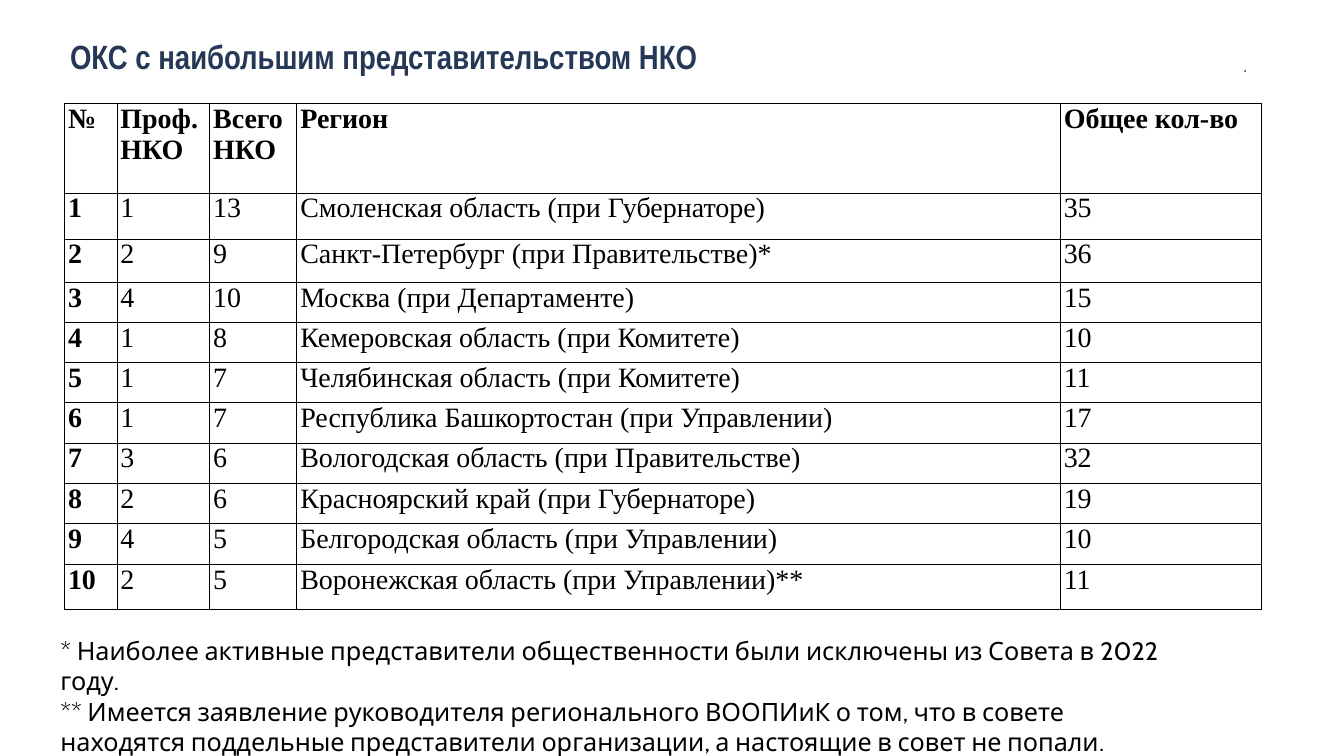
from lxml.etree import SubElement
from pptx import Presentation
from pptx.dml.color import RGBColor
from pptx.enum.text import MSO_ANCHOR as Anchor, MSO_AUTO_SIZE as AutoSize, PP_ALIGN as Align
from pptx.oxml.ns import qn
from pptx.util import Inches, Pt

NAVY = RGBColor(0x25, 0x39, 0x57)
BLACK = RGBColor(0, 0, 0)

TITLE_FONT = {"name": "Arial Narrow", "size": Pt(48), "bold": True}
DOT_FONT = {"name": "Arial Narrow", "size": Pt(24)}
NOTE_FONT = {"name": "Cabin", "size": Pt(36)}
CELL_FONT = {"name": "Times New Roman", "size": Pt(40)}

COLUMN_WIDTHS = [1.04, 1.84, 1.73, 15.15, 3.99]
ROW_HEIGHTS = [1.78, 0.91, 0.87, 0.79, 0.79, 0.79, 0.81, 0.81, 0.79, 0.81, 0.9]
HEADER = ["№", "Проф. НКО", "Всего НКО", "Регион", "Общее кол-во"]
COUNCILS = [
    (1, 13, "Смоленская область (при Губернаторе)", 35),
    (2, 9, "Санкт-Петербург (при Правительстве)*", 36),
    (4, 10, "Москва (при Департаменте)", 15),
    (1, 8, "Кемеровская область (при Комитете)", 10),
    (1, 7, "Челябинская область (при Комитете)", 11),
    (1, 7, "Республика Башкортостан (при Управлении)", 17),
    (3, 6, "Вологодская область (при Правительстве)", 32),
    (2, 6, "Красноярский край (при Губернаторе)", 19),
    (4, 5, "Белгородская область (при Управлении)", 10),
    (2, 5, "Воронежская область (при Управлении)**", 11),
]
NOTES = [
    "* Наиболее активные представители общественности были исключены из Совета в 2022 году.",
    "** Имеется заявление руководителя регионального ВООПИиК о том, что в совете "
    "находятся поддельные представители организации, а настоящие в совет не попали.",
]


def set_attrs(obj, values):
    for name, value in values.items():
        setattr(obj, name, value)


def write(p, text, font, color, **paragraph_format):
    set_attrs(p, paragraph_format)
    r = p.add_run()
    r.text = text
    set_attrs(r.font, font)
    r.font.color.rgb = color


def add_text(slide, box, lines, font, color, frame, **paragraph_format):
    tf = slide.shapes.add_textbox(*map(Inches, box)).text_frame
    set_attrs(tf, {"word_wrap": True, **frame})
    for i, line in enumerate(lines):
        p = tf.add_paragraph() if i else tf.paragraphs[0]
        write(p, line, font, color, **paragraph_format)


def margins(horizontal, vertical):
    return {
        "margin_left": Inches(horizontal), "margin_right": Inches(horizontal),
        "margin_top": Inches(vertical), "margin_bottom": Inches(vertical),
    }


def add_borders(cell):
    tc_pr = cell._tc.get_or_add_tcPr()
    for side in ("lnL", "lnR", "lnT", "lnB"):
        ln = SubElement(tc_pr, qn(f"a:{side}"), w=str(Pt(1)))
        fill = SubElement(ln, qn("a:solidFill"))
        SubElement(fill, qn("a:srgbClr"), val=str(BLACK))


def add_council_table(slide):
    rows = [HEADER] + [(i, *council) for i, council in enumerate(COUNCILS, 1)]
    box = (1.28, 2.05, sum(COLUMN_WIDTHS), sum(ROW_HEIGHTS))
    table = slide.shapes.add_table(len(rows), len(HEADER), *map(Inches, box)).table
    set_attrs(table, {"first_row": False, "horz_banding": False})
    for column, width in zip(table.columns, COLUMN_WIDTHS):
        column.width = Inches(width)
    for i, (row, height, values) in enumerate(zip(table.rows, ROW_HEIGHTS, rows)):
        row.height = Inches(height)
        for j, (cell, value) in enumerate(zip(row.cells, values)):
            set_attrs(cell, margins(0.07, 0))
            add_borders(cell)
            cell.fill.background()
            font = {**CELL_FONT, "bold": i == 0 or j == 0}
            write(cell.text_frame.paragraphs[0], str(value), font, BLACK, alignment=Align.JUSTIFY)


def main():
    """Build the slide on public councils with the most NGO members."""
    prs = Presentation()
    set_attrs(prs, {"slide_width": Inches(26.67), "slide_height": Inches(15)})
    slide = prs.slides.add_slide(prs.slide_layouts[6])
    inset, grow = margins(0.08, 0.08), {"auto_size": AutoSize.SHAPE_TO_FIT_TEXT}
    add_text(slide, (1.31, 0.57, 24.78, 1.02), ["ОКС с наибольшим представительством НКО"],
             TITLE_FONT, NAVY, {"vertical_anchor": Anchor.BOTTOM, **inset}, space_after=Pt(24))
    add_text(slide, (12.4, 1.03, 12.43, 0.56), ["."], DOT_FONT, NAVY,
             {"vertical_anchor": Anchor.MIDDLE, **inset, **grow}, alignment=Align.RIGHT)
    add_council_table(slide)
    add_text(slide, (1.1, 12.56, 22.6, 1.92), NOTES, NOTE_FONT, BLACK, grow)
    prs.save("out.pptx")


if __name__ == "__main__":
    main()
